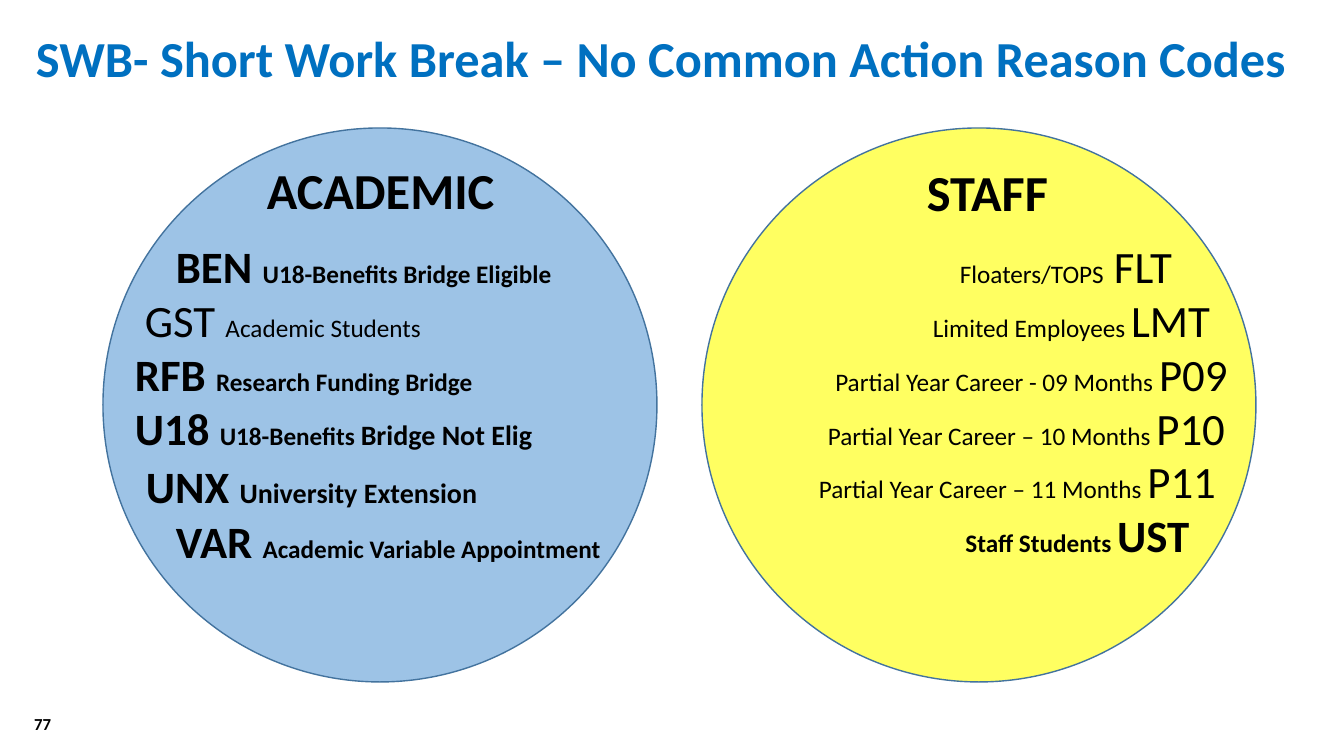
import pptx
import pptx.dml.color
import pptx.enum.shapes
import pptx.enum.text
import pptx.oxml
import pptx.oxml.ns
import pptx.util

SHAPES = pptx.enum.shapes.MSO_SHAPE
ALIGN = pptx.enum.text.PP_ALIGN
ANCHOR = pptx.enum.text.MSO_ANCHOR

FONT = "Calibri"
BLACK, BLUE, OUTLINE = "000000", "0070C0", "43739E"
PX = 914400 / 100.8

CIRCLE_TOP, CIRCLE_SIZE = 128, 554
CIRCLES = [(103, "9DC3E6", 100), (702, "FFFF00", 62)]

HEADINGS = [
    ("SWB- Short Work Break – No Common Action Reason Codes",
     (26, 22, 1275, 72), 36, BLUE, ALIGN.LEFT, ANCHOR.TOP),
    ("ACADEMIC", (257, 154, 259, 72), 36, BLACK, ALIGN.LEFT, ANCHOR.TOP),
    ("STAFF", (875, 156, 225, 72), 36, BLACK, ALIGN.CENTER, ANCHOR.TOP),
    ("77", (12, 704, 49, 39), 12, BLACK, ALIGN.RIGHT, ANCHOR.MIDDLE),
]

# (indent px, space before pt, space after pt, bold, [(text, size)])
ACADEMIC_CODES = [
    (41, 0, 0, True, [("BEN ", 32), ("U18-Benefits Bridge Eligible", 18)]),
    (10, 0, 0, False, [("GST ", 32), ("Academic Students", 18)]),
    (0, 0, 0, True, [("RFB ", 32), ("Research Funding Bridge", 18)]),
    (0, 0, 0, True, [("U18 ", 32), ("U18-Benefits ", 18), ("Bridge Not Elig", 20)]),
    (11, 3, 1, True, [("UNX ", 32), ("University Extension", 20)]),
    (41, 0, 0, True, [("VAR ", 32), ("Academic Variable Appointment", 18)]),
]
STAFF_CODES = [
    (148, 0, 0, False, [("Floaters/TOPS", 18), (" FLT", 32)]),
    (159, 0, 0, False, [("Limited Employees ", 18), ("LMT", 32)]),
    (79, 0, 0, False, [("Partial Year Career - 09 Months ", 18), ("P09", 32)]),
    (69, 0, 0, False, [("Partial Year Career – 10 Months ", 18), ("P10", 32)]),
    (51, 0, 0, False, [("Partial Year Career – 11 Months ", 18), ("P11", 32)]),
    (171, 0, 0, True, [("Staff Students ", 18), ("UST", 32)]),
]
CODE_LISTS = [
    (ACADEMIC_CODES, (125, 234, 554, 343), ALIGN.LEFT),
    (STAFF_CODES, (715, 234, 554, 336), ALIGN.CENTER),
]


def emu(px):
    return round(px * PX)


def color(value):
    return pptx.dml.color.RGBColor.from_string(value)


def add_circle(page, left, fill, opacity):
    circle = page.shapes.add_shape(
        SHAPES.OVAL, *map(emu, (left, CIRCLE_TOP, CIRCLE_SIZE, CIRCLE_SIZE)))
    circle.shadow.inherit = False
    circle.fill.solid()
    circle.fill.fore_color.rgb = color(fill)
    circle.line.color.rgb = color(OUTLINE)
    circle.line.width = pptx.util.Pt(1)
    if opacity < 100:
        tint = circle.fill._xPr.find(".//" + pptx.oxml.ns.qn("a:srgbClr"))
        alpha = pptx.oxml.parse_xml(
            f'<a:alpha {pptx.oxml.ns.nsdecls("a")} val="{opacity * 1000}"/>')
        tint.append(alpha)


def add_box(page, bounds, anchor=ANCHOR.TOP):
    frame = page.shapes.add_textbox(*map(emu, bounds)).text_frame
    frame.word_wrap = True
    frame.vertical_anchor = anchor
    return frame


def format_span(span, size, bold, tone):
    span.font.name = FONT
    span.font.size = pptx.util.Pt(size)
    span.font.bold = bold
    span.font.color.rgb = color(tone)


def add_heading(page, text, bounds, size, tone, align, anchor):
    frame = add_box(page, bounds, anchor)
    frame.text = text
    para = frame.paragraphs[0]
    para.alignment = align
    format_span(para.runs[0], size, True, tone)


def add_codes(page, codes, bounds, align):
    frame = add_box(page, bounds)
    for index, (indent, before, after, bold, parts) in enumerate(codes):
        para = frame.add_paragraph() if index else frame.paragraphs[0]
        para.alignment = align
        para.space_before = pptx.util.Pt(before)
        para.space_after = pptx.util.Pt(after)
        para._p.get_or_add_pPr().set("marL", str(emu(indent)))
        for text, size in parts:
            span = para.add_run()
            span.text = text
            format_span(span, size, bold, BLACK)


def main():
    deck = pptx.Presentation()
    deck.slide_width, deck.slide_height = emu(1344), emu(756)
    page = deck.slides.add_slide(deck.slide_layouts[6])
    for circle in CIRCLES:
        add_circle(page, *circle)
    for code_list in CODE_LISTS:
        add_codes(page, *code_list)
    for heading in HEADINGS:
        add_heading(page, *heading)
    deck.save("out.pptx")


if __name__ == "__main__":
    main()
